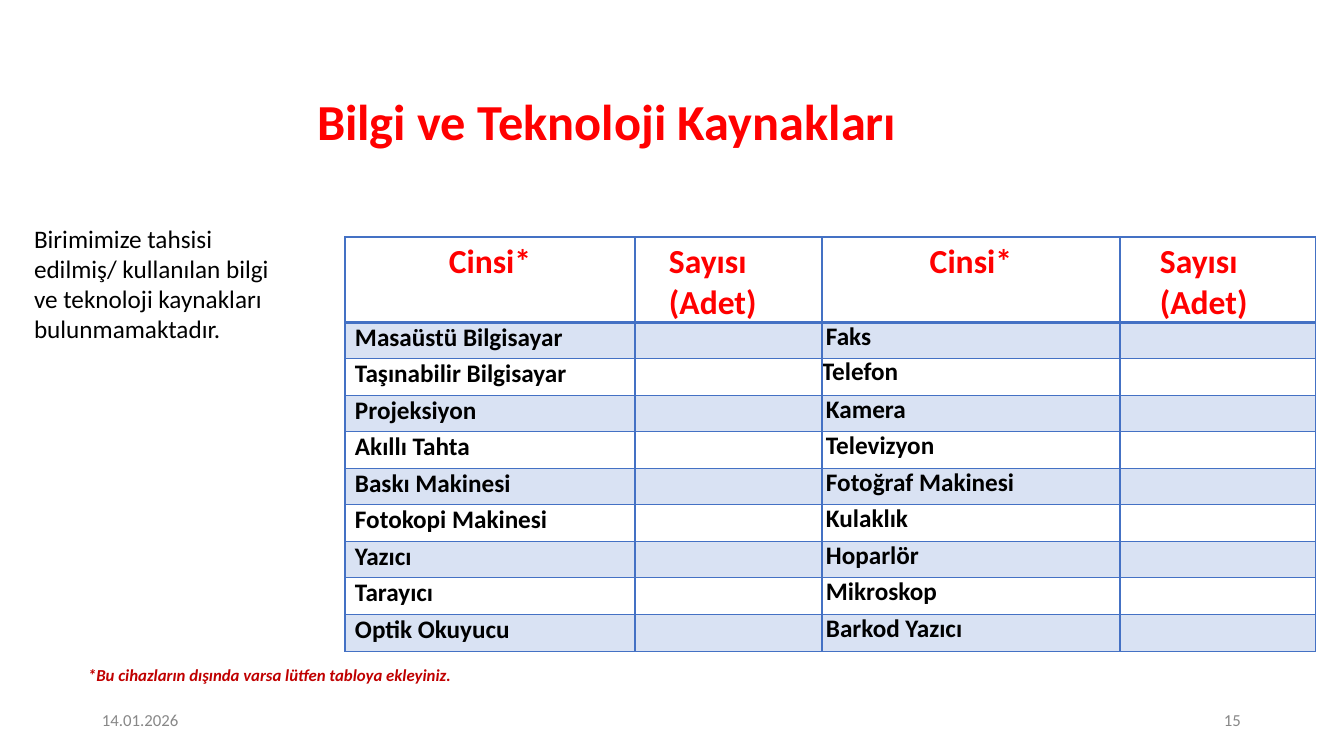
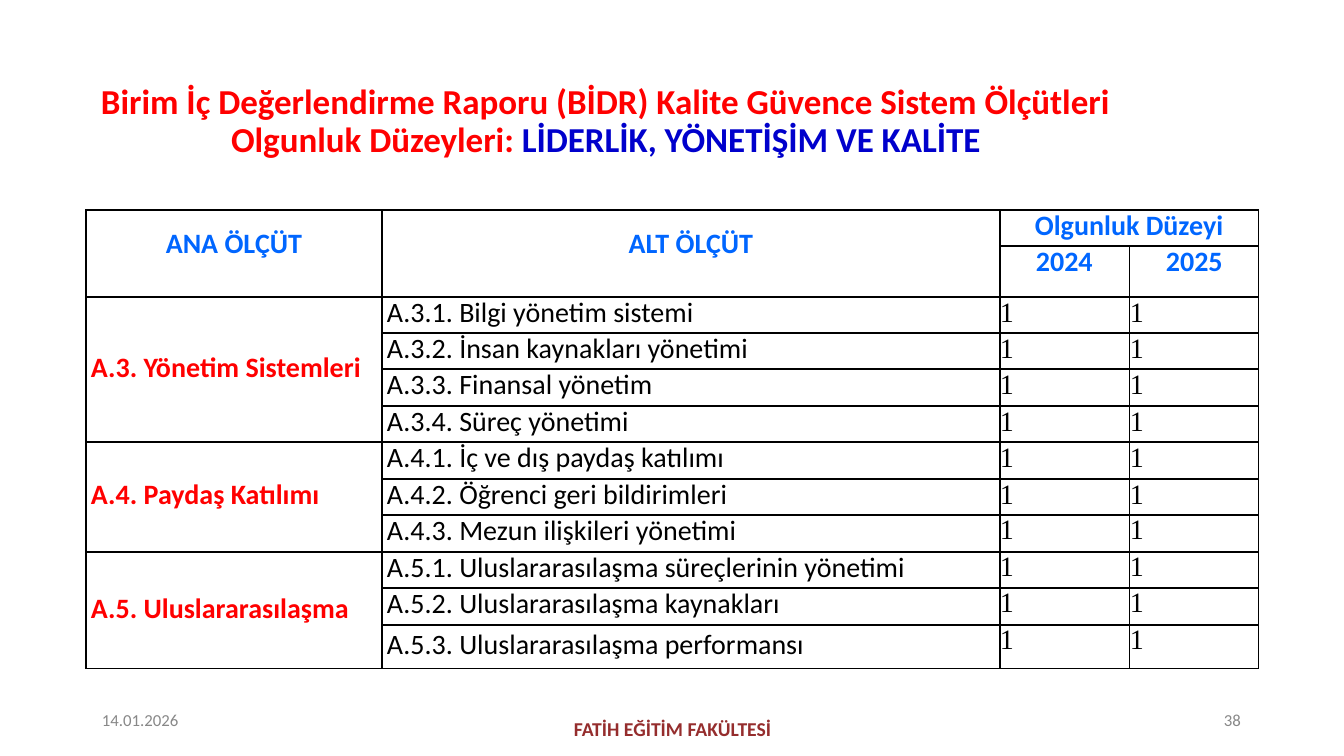
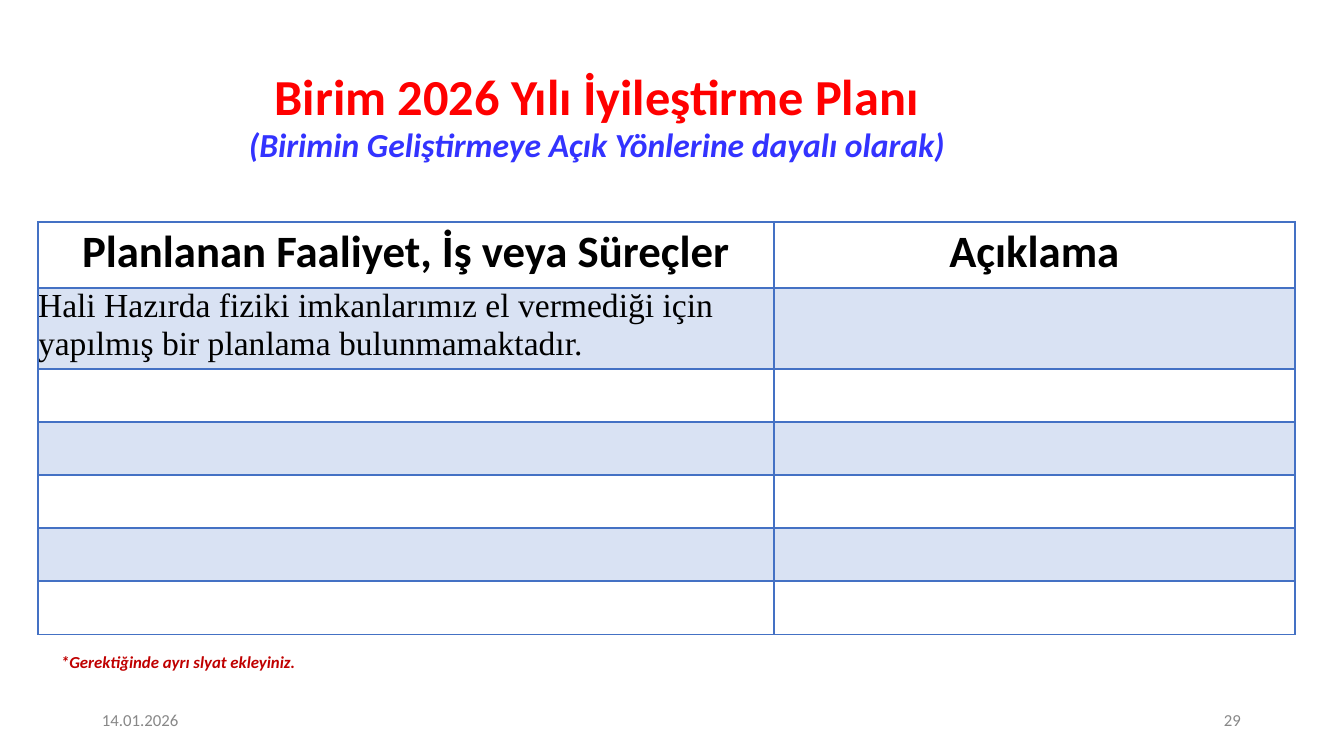
from lxml.etree import SubElement as Sub
from pptx import Presentation
from pptx.dml.color import RGBColor as Rgb
from pptx.enum.text import MSO_ANCHOR as Anchor, PP_ALIGN as Align
from pptx.oxml.ns import qn
from pptx.util import Emu, Pt

SCALE = 914400 / 100.8
INK = {"red": "FF0000", "black": "000000", "grey": "888888", "note": "C00000",
       "navy": "0000CC", "violet": "3333FF", "sky": "0066FF", "wine": "952D2D",
       "blue": "4471C4"}
SANS, SERIF = "Calibri", "Times New Roman"
DATE = "14.01.2026"


def px(size):
    """Turn pixels into EMU."""
    return Emu(round(size * SCALE))


def split(total, count):
    """Share a length among equal whole-pixel parts."""
    return [total * (i + 1) // count - total * i // count for i in range(count)]


def run(text, size, ink="black", bold=False, slant=False, face=SANS):
    """Describe one run of text."""
    return text, size, ink, bold, slant, face


def fill_para(para, runs, left=0, hang=0, line=None, mid=False):
    """Write runs into a paragraph with its indents and line height."""
    props = para._p.get_or_add_pPr()
    props.set("marL", str(px(left)))
    props.set("indent", str(px(hang)))
    para.alignment = Align.CENTER if mid else Align.LEFT
    if line:
        para.line_spacing = Pt(line)
    for text, size, ink, bold, slant, face in runs:
        part = para.add_run()
        part.text = text
        font = part.font
        font.name, font.size = face, Pt(size)
        font.bold, font.italic = bold, slant
        font.color.rgb = Rgb.from_string(INK[ink])


def add_text(slide, box, *paras, top=0):
    """Place a text box; each paragraph is a dict for fill_para."""
    frame = slide.shapes.add_textbox(*map(px, box)).text_frame
    frame.word_wrap = True
    frame.margin_left = frame.margin_right = frame.margin_bottom = 0
    frame.margin_top = px(top)
    for i, para in enumerate(paras):
        fill_para(frame.add_paragraph() if i else frame.paragraphs[0], **para)


def add_title(slide, *paras, box=(36, 54, 1151, 118), top=0):
    """Place the slide title."""
    add_text(slide, box, *paras, top=top)


def add_foot(slide, page):
    """Place the date and the page number."""
    for left, width, text in ((102, 80, DATE), (1224, 27, page)):
        add_text(slide, (left, 713, width, 20),
                 dict(runs=[run(text, 12, "grey")], line=12.4))


def add_note(slide, box, text):
    """Place the remark under a table."""
    add_text(slide, box, dict(runs=[run(text, 12, "note", True, True)], left=1), top=1)


def edge(cell, side, ink, width):
    """Draw one border of a cell."""
    line = Sub(cell._tc.get_or_add_tcPr(), qn("a:ln" + side), w=str(Pt(width)))
    Sub(Sub(line, qn("a:solidFill")), qn("a:srgbClr"), val=INK[ink])


def add_grid(slide, spot, cols, rows, ink, band=False):
    """Place a ruled table, banded under a heavy header line if asked."""
    box = (*spot, sum(cols), sum(rows))
    table = slide.shapes.add_table(len(rows), len(cols), *map(px, box)).table
    table.first_row = table.horz_banding = False
    for col, width in zip(table.columns, cols):
        col.width = px(width)
    for r, (row, high) in enumerate(zip(table.rows, rows)):
        row.height = px(high)
        for cell in row.cells:
            cell.margin_left = cell.margin_right = 0
            cell.margin_top = cell.margin_bottom = 0
            for side in "LRTB":
                heavy = band and (r, side) in ((0, "B"), (1, "T"))
                edge(cell, side, ink, 2.25 if heavy else 1)
            if band and r % 2:
                cell.fill.solid()
                cell.fill.fore_color.rgb = Rgb.from_string(INK["blue"])
                tint = cell._tc.tcPr.find(".//" + qn("a:solidFill") + "[last()]/")
                for tint in cell._tc.tcPr.find(qn("a:solidFill")):
                    Sub(tint, qn("a:alpha"), val="20000")
            else:
                cell.fill.background()
    return table


def set_cell(cell, *runs, top=0, **look):
    """Write one paragraph into a cell."""
    cell.margin_top = px(top)
    fill_para(cell.text_frame.paragraphs[0], runs, **look)


def tech_slide(slide):
    """Build the slide on technology resources."""
    add_title(slide, dict(runs=[run("Bilgi ve Teknoloji Kaynakları", 36, "red", True)],
                          left=281), top=36)
    add_text(slide, (34, 223, 243, 152), dict(runs=[run(
        "Birimimize tahsisi edilmiş/ kullanılan bilgi ve teknoloji kaynakları "
        "bulunmamaktadır.", 18)]))
    pairs = [("Masaüstü Bilgisayar", "Faks"), ("Taşınabilir Bilgisayar", "Telefon"),
             ("Projeksiyon", "Kamera"), ("Akıllı Tahta", "Televizyon"),
             ("Baskı Makinesi", "Fotoğraf Makinesi"), ("Fotokopi Makinesi", "Kulaklık"),
             ("Yazıcı", "Hoparlör"), ("Tarayıcı", "Mikroskop"),
             ("Optik Okuyucu", "Barkod Yazıcı")]
    table = add_grid(slide, (345, 237), (290, 187, 298, 196),
                     [85, *split(329, len(pairs))], "blue", True)
    for col, left in ((0, 34), (2, 40)):
        set_cell(table.cell(0, col), run("Cinsi*", 24, "red", True), top=5, mid=True)
        set_cell(table.cell(0, col + 1), run("Sayısı (Adet)", 24, "red", True),
                 top=5, left=left)
    for r, (first, second) in enumerate(pairs, 1):
        flush = second == "Telefon"
        set_cell(table.cell(r, 0), run(first, 18, bold=True), left=10)
        set_cell(table.cell(r, 2), run(second, 18, bold=True),
                 left=0 if flush else 4, line=20.4 if flush else 20.9)
    add_note(slide, (87, 664, 369, 23),
             "*Bu cihazların dışında varsa lütfen tabloya ekleyiniz.")
    add_foot(slide, "15")


def level_slide(slide):
    """Build the slide on maturity levels."""
    add_title(slide, dict(runs=[
        run("Birim İç Değerlendirme Raporu (BİDR) Kalite Güvence Sistem Ölçütleri "
            "Olgunluk Düzeyleri: ", 25, "red", True),
        run("LİDERLİK, YÖNETİŞİM VE KALİTE", 25, "navy", True)],
        left=195, hang=-130, line=27), top=30)
    groups = [
        ("A.3. Yönetim Sistemleri", [
            "A.3.1. Bilgi yönetim sistemi", "A.3.2. İnsan kaynakları yönetimi",
            "A.3.3. Finansal yönetim", "A.3.4. Süreç yönetimi"]),
        ("A.4. Paydaş Katılımı", [
            "A.4.1. İç ve dış paydaş katılımı", "A.4.2. Öğrenci geri bildirimleri",
            "A.4.3. Mezun ilişkileri yönetimi"]),
        ("A.5. Uluslararasılaşma", [
            "A.5.1. Uluslararasılaşma süreçlerinin yönetimi",
            "A.5.2. Uluslararasılaşma kaynakları",
            "A.5.3. Uluslararasılaşma performansı"])]
    table = add_grid(slide, (86, 210), (296, 618, 130, 129),
                     [36, 51, *split(328, 9), 44], "black")
    for col, text in enumerate(("ANA ÖLÇÜT", "ALT ÖLÇÜT")):
        table.cell(0, col).merge(table.cell(1, col))
        set_cell(table.cell(0, col), run(text, 20, "sky", True), top=17, mid=True)
    table.cell(0, 2).merge(table.cell(0, 3))
    for r, col, text, left in ((0, 2, "Olgunluk Düzeyi", 35), (1, 2, "2024", 36),
                               (1, 3, "2025", 36)):
        set_cell(table.cell(r, col), run(text, 20, "sky", True), left=left, line=23.4)
    r = 2
    for name, parts in groups:
        main = table.cell(r, 0)
        main.merge(table.cell(r + len(parts) - 1, 0))
        set_cell(main, run(name, 20, "red", True), left=5)
        main.vertical_anchor = Anchor.MIDDLE
        main.margin_bottom = px(4)
        for part in parts:
            last = r == 11
            set_cell(table.cell(r, 1), run(part, 20), top=3 if last else 0, left=5,
                     line=None if last else 23.6)
            for col in (2, 3):
                set_cell(table.cell(r, col), run("1", 20, face=SERIF))
            r += 1
    add_foot(slide, "38")
    add_text(slide, (573, 720, 200, 22), dict(
        runs=[run("FATİH EĞİTİM FAKÜLTESİ", 14, "wine", True)], left=1, line=14.3))


def plan_slide(slide):
    """Build the slide on the improvement plan."""
    add_title(slide,
              dict(runs=[run("Birim 2026 Yılı İyileştirme Planı", 36, "red", True)],
                   mid=True, line=42.1),
              dict(runs=[run("(Birimin Geliştirmeye Açık Yönlerine dayalı olarak)",
                             24, "violet", True, True)], mid=True, line=27.7),
              box=(248, 66, 698, 101), top=1)
    table = add_grid(slide, (38, 222), (736, 521), [66, 81, *split(266, 5)],
                     "blue", True)
    set_cell(table.cell(0, 0), run("Planlanan Faaliyet, İş veya Süreçler", 32, bold=True),
             top=3, left=44)
    set_cell(table.cell(0, 1), run("Açıklama", 32, bold=True), top=3, mid=True)
    set_cell(table.cell(1, 0), run(
        "Hali Hazırda fiziki imkanlarımız el vermediği için yapılmış bir planlama "
        "bulunmamaktadır.", 24, face=SERIF))
    add_note(slide, (60, 651, 260, 23), "*Gerektiğinde ayrı slyat ekleyiniz.")
    add_foot(slide, "29")


def main():
    """Build and save the slides."""
    deck = Presentation()
    deck.slide_width, deck.slide_height = px(1344), px(756)
    for build in (tech_slide, level_slide, plan_slide):
        build(deck.slides.add_slide(deck.slide_layouts[6]))
    deck.save("out.pptx")


if __name__ == "__main__":
    main()
